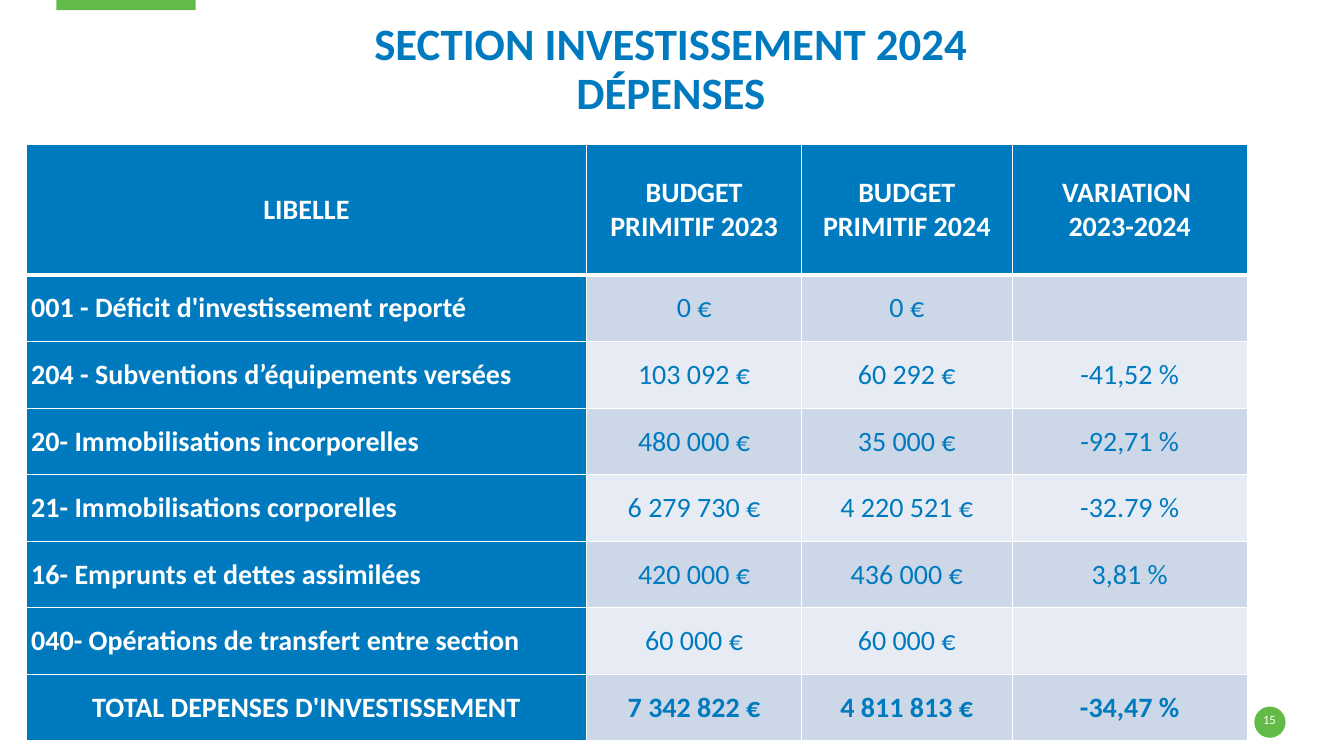
"""Builds the 2024 investment expenditure slide."""
import pptx
import pptx.util
import pptx.dml.color
import pptx.enum.shapes
import pptx.enum.text
import pptx.oxml
import pptx.oxml.ns

Inches, Pt = pptx.util.Inches, pptx.util.Pt
RGB = pptx.dml.color.RGBColor.from_string
SHAPE = pptx.enum.shapes.MSO_SHAPE
ALIGN, ANCHOR = pptx.enum.text.PP_ALIGN, pptx.enum.text.MSO_ANCHOR

THEME = {
    "font": "Calibri", "blue": "007ABF", "green": "62BB46", "white": "FFFFFF",
    "bands": ["CCD7E8", "E7ECF4"], "title": 32, "table": 20, "number": 9,
}
COLS = [5.56, 2.13, 2.09, 2.33]
HEADER_H, ROW_H = 1.3, 0.66
ROWS = [
    ["LIBELLE", "BUDGET PRIMITIF 2023", "BUDGET PRIMITIF 2024", "VARIATION \v2023-2024"],
    ["001 - Déficit d'investissement reporté", "0 €", "0 €", ""],
    ["204 - Subventions d’équipements versées", "103 092 €", "60 292 €", "-41,52 %"],
    ["20- Immobilisations incorporelles", "480 000 €", "35 000 €", "-92,71 %"],
    ["21- Immobilisations corporelles", "6 279 730 €", "4 220 521 €", "-32.79 %"],
    ["16- Emprunts et dettes assimilées", "420 000 €", "436 000 €", "3,81 %"],
    ["040- Opérations de transfert entre section", "60 000 €", "60 000 €", ""],
    ["TOTAL DEPENSES D'INVESTISSEMENT", "7 342 822 €", "4 811 813 €", "-34,47 %"],
]
LAST = len(ROWS) - 1


def write(tf, text, size, color, bold=False, align=ALIGN.CENTER):
    tf.text = text
    p = tf.paragraphs[0]
    p.alignment = align
    p.font.name, p.font.size, p.font.bold = THEME["font"], Pt(size), bold
    p.font.color.rgb = RGB(THEME[color])
    return p


def set_borders(cell, widths):
    for i, (side, width) in enumerate(zip("LRTB", widths)):
        ln = pptx.oxml.parse_xml(
            f'<a:ln{side} {pptx.oxml.ns.nsdecls("a")} w="{Pt(width)}"><a:solidFill>'
            f'<a:srgbClr val="{THEME["white"]}"/></a:solidFill></a:ln{side}>')
        cell._tc.get_or_add_tcPr().insert(i, ln)


prs = pptx.Presentation()
prs.slide_width, prs.slide_height = Inches(13.33), Inches(7.5)
s = prs.slides.add_slide(prs.slide_layouts[5])

for kind, box in [(SHAPE.RECTANGLE, (0.56, 0, 1.38, 0.1)),
                  (SHAPE.OVAL, (12.44, 7.01, 0.31, 0.31))]:
    sp = s.shapes.add_shape(kind, *map(Inches, box))
    sp.shadow.inherit = False
    sp.fill.solid()
    sp.fill.fore_color.rgb = RGB(THEME["green"])
    sp.line.fill.background()

title = s.shapes.title
title.left, title.top, title.width, title.height = map(Inches, (0.56, 0.61, 12.19, 0.57))
number = s.shapes.add_textbox(*map(Inches, (12.43, 7.06, 0.32, 0.2)))
for sp in (title, number):
    tf = sp.text_frame
    tf.margin_left = tf.margin_right = tf.margin_top = tf.margin_bottom = 0
    tf.word_wrap = True
    tf.auto_size = pptx.enum.text.MSO_AUTO_SIZE.NONE
title.text_frame.vertical_anchor = ANCHOR.BOTTOM
p = write(title.text_frame, "SECTION INVESTISSEMENT 2024\vDÉPENSES", THEME["title"], "blue", True)
p.line_spacing = 0.9
write(number.text_frame, "15", THEME["number"], "white")

table = s.shapes.add_table(len(ROWS), len(COLS), Inches(0.26), Inches(1.43),
                           Inches(sum(COLS)), Inches(HEADER_H + LAST * ROW_H)).table
for column, width in zip(table.columns, COLS):
    column.width = Inches(width)
for r, values in enumerate(ROWS):
    table.rows[r].height = Inches(ROW_H if r else HEADER_H)
    for c, value in enumerate(values):
        cell = table.cell(r, c)
        heading = r == 0 or c == 0
        cell.fill.solid()
        cell.fill.fore_color.rgb = RGB(THEME["blue"] if heading else THEME["bands"][(r - 1) % 2])
        set_borders(cell, (1, 1, 3 if r == 1 else 1, 3 if r == 0 else 1))
        cell.vertical_anchor = ANCHOR.MIDDLE
        cell.margin_left = cell.margin_right = Inches(0.05)
        cell.margin_top = cell.margin_bottom = 0
        write(cell.text_frame, value, THEME["table"], "white" if heading else "blue",
              heading or r == LAST, ALIGN.LEFT if c == 0 and 0 < r < LAST else ALIGN.CENTER)

prs.save("out.pptx")
